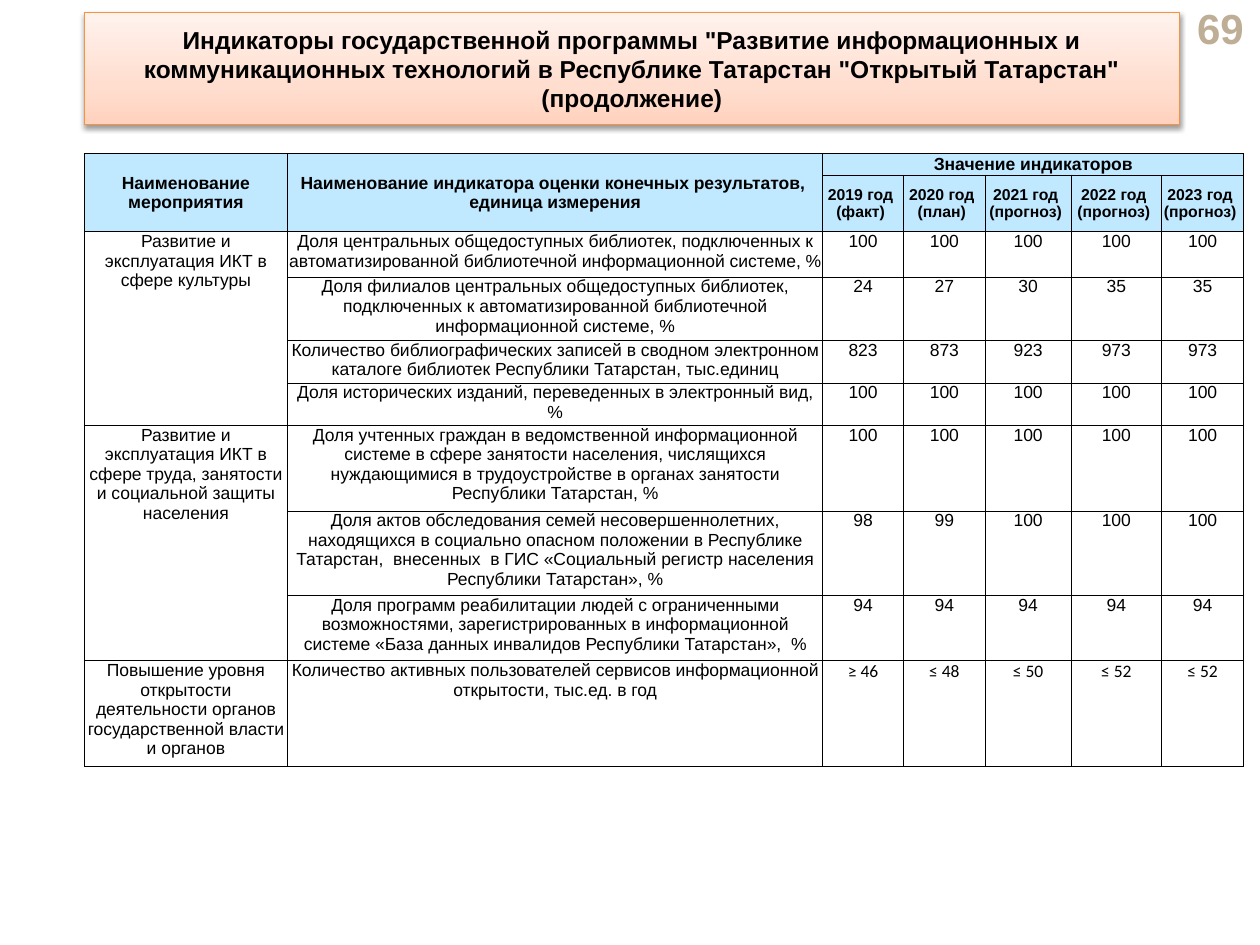
from pptx import Presentation
from pptx.dml.color import RGBColor
from pptx.enum.text import MSO_ANCHOR, MSO_AUTO_SIZE, PP_ALIGN
from pptx.oxml import parse_xml
from pptx.oxml.ns import nsdecls
from pptx.util import Inches, Pt

CENTER, RIGHT = PP_ALIGN.CENTER, PP_ALIGN.RIGHT
TOP, MIDDLE = MSO_ANCHOR.TOP, MSO_ANCHOR.MIDDLE
NO_AUTOSIZE = MSO_AUTO_SIZE.NONE

BLACK = RGBColor(0x00, 0x00, 0x00)
WHITE = RGBColor(0xFF, 0xFF, 0xFF)
HEADER_BLUE = RGBColor(0xC0, 0xE9, 0xFF)
PAGE_TAN = RGBColor(0xBF, 0xAE, 0x96)
ORANGE = RGBColor(0xF6, 0x92, 0x40)
PEACH_DARK = RGBColor(0xFF, 0xD2, 0xBD)
PEACH = RGBColor(0xFF, 0xDE, 0xD0)
PEACH_LIGHT = RGBColor(0xFF, 0xF2, 0xED)

TITLE = (
    'Индикаторы государственной программы "Развитие информационных и '
    'коммуникационных технологий в Республике Татарстан "Открытый Татарстан" (продолжение)'
)
PAGE_NUMBER = "69"
HEADERS = [
    "Наименование мероприятия",
    "Наименование индикатора оценки конечных результатов, \nединица измерения",
    "Значение индикаторов",
]
YEARS = [
    "2019 год\n(факт)",
    "2020 год\n(план)",
    "2021 год\n(прогноз)",
    "2022 год\n(прогноз)",
    "2023 год\n(прогноз)",
]
MEASURES = [
    ("Развитие и эксплуатация ИКТ в сфере культуры", "Arial", [
        ("Доля центральных общедоступных библиотек, подключенных к автоматизированной "
         "библиотечной информационной системе, %", ["100"] * 5),
        ("Доля филиалов центральных общедоступных библиотек, подключенных к "
         "автоматизированной библиотечной информационной системе, %",
         ["24", "27", "30", "35", "35"]),
        ("Количество библиографических записей в сводном электронном каталоге библиотек "
         "Республики Татарстан, тыс.единиц", ["823", "873", "923", "973", "973"]),
        ("Доля исторических изданий, переведенных в электронный вид, %", ["100"] * 5),
    ]),
    ("Развитие и эксплуатация ИКТ в сфере труда, занятости и социальной защиты населения", "Arial", [
        ("Доля учтенных граждан в ведомственной информационной системе в сфере занятости "
         "населения, числящихся нуждающимися в трудоустройстве в органах занятости "
         "Республики Татарстан, %", ["100"] * 5),
        ("Доля актов обследования семей несовершеннолетних, находящихся в социально опасном "
         "положении в Республике Татарстан,  внесенных  в ГИС «Социальный регистр населения "
         "Республики Татарстан», %", ["98", "99", "100", "100", "100"]),
        ("Доля программ реабилитации людей с ограниченными возможностями, зарегистрированных "
         "в информационной системе «База данных инвалидов Республики Татарстан»,  %", ["94"] * 5),
    ]),
    ("Повышение уровня открытости деятельности органов государственной власти и органов", "Calibri", [
        ("Количество активных пользователей сервисов информационной открытости, тыс.ед. в год",
         ["≥ 46", "≤ 48", "≤ 50", "≤ 52", "≤ 52"]),
    ]),
]
COLUMN_WIDTHS = [1.61, 4.25, 0.64, 0.65, 0.68, 0.72, 0.65]
ROW_HEIGHTS = [0.17, 0.45, 0.36, 0.5, 0.34, 0.33, 0.68, 0.67, 0.52, 0.84]


def write(frame, text, size=10, bold=False, color=BLACK, font="Arial", align=CENTER):
    para = frame.paragraphs[0]
    para.alignment = align
    for index, line in enumerate(text.split("\n")):
        if index:
            para.add_line_break()
        span = para.add_run()
        span.text = line
        span.font.name = font
        span.font.size = Pt(size)
        span.font.bold = bold
        span.font.color.rgb = color


def fill_cell(cell, text, fill=None, anchor=TOP, left=0, right=0, **text_format):
    cell.margin_left, cell.margin_right = Inches(left), Inches(right)
    cell.margin_top = cell.margin_bottom = 0
    cell.vertical_anchor = anchor
    if fill is not None:
        cell.fill.solid()
        cell.fill.fore_color.rgb = fill
    write(cell.text_frame, text, **text_format)


def add_borders(cell):
    properties = cell._tc.get_or_add_tcPr()
    for index, side in enumerate(("lnL", "lnR", "lnT", "lnB")):
        properties.insert(index, parse_xml(
            f'<a:{side} {nsdecls("a")} w="{Pt(0.5)}"><a:solidFill>'
            f'<a:srgbClr val="{BLACK}"/></a:solidFill></a:{side}>'))


def style_title(box):
    stops = "".join(
        f'<a:gs pos="{position * 1000}"><a:srgbClr val="{color}"/></a:gs>'
        for position, color in ((0, PEACH_DARK), (35, PEACH), (100, PEACH_LIGHT)))
    parts = [
        f'<a:prstGeom {nsdecls("a")} prst="roundRect"><a:avLst/></a:prstGeom>',
        f'<a:gradFill {nsdecls("a")} rotWithShape="1"><a:gsLst>{stops}</a:gsLst>'
        '<a:lin ang="16200000" scaled="1"/></a:gradFill>',
        f'<a:ln {nsdecls("a")} w="{Pt(0.75)}"><a:solidFill>'
        f'<a:srgbClr val="{ORANGE}"/></a:solidFill></a:ln>',
        f'<a:effectLst {nsdecls("a")}><a:outerShdw blurRad="{Pt(3.1)}" dist="{Pt(1.6)}" '
        f'dir="5400000" rotWithShape="0"><a:srgbClr val="{BLACK}">'
        '<a:alpha val="38000"/></a:srgbClr></a:outerShdw></a:effectLst>',
    ]
    for part in parts:
        box.element.spPr.append(parse_xml(part))


def place(box, left, top, width, height):
    box.left, box.top = Inches(left), Inches(top)
    box.width, box.height = Inches(width), Inches(height)


def add_indicator_table(page):
    frame = page.shapes.add_table(
        len(ROW_HEIGHTS), len(COLUMN_WIDTHS), Inches(0.67), Inches(1.22),
        Inches(sum(COLUMN_WIDTHS)), Inches(sum(ROW_HEIGHTS)))
    table = frame.table
    table.first_row = table.horz_banding = False
    for column, width in zip(table.columns, COLUMN_WIDTHS):
        column.width = Inches(width)
    for row, height in zip(table.rows, ROW_HEIGHTS):
        row.height = Inches(height)
    for cell in table.iter_cells():
        cell.fill.background()
        add_borders(cell)

    header = dict(fill=HEADER_BLUE, anchor=MIDDLE, right=0.04, bold=True)
    for column, text in enumerate(HEADERS):
        fill_cell(table.cell(0, column), text, left=0.04, **header)
    for column, text in enumerate(YEARS, 2):
        fill_cell(table.cell(1, column), text, size=9, **header)
    for column in (0, 1):
        table.cell(0, column).merge(table.cell(1, column))
    table.cell(0, 2).merge(table.cell(0, 6))

    row = 2
    for measure, value_font, indicators in MEASURES:
        first = table.cell(row, 0)
        fill_cell(first, measure)
        if len(indicators) > 1:
            first.merge(table.cell(row + len(indicators) - 1, 0))
        for indicator, values in indicators:
            fill_cell(table.cell(row, 1), indicator)
            for column, value in enumerate(values, 2):
                fill_cell(table.cell(row, column), value, fill=WHITE, font=value_font)
            row += 1


def main():
    deck = Presentation()
    deck.slide_width, deck.slide_height = Inches(10), Inches(7.5)
    page = deck.slides.add_slide(deck.slide_layouts[5])

    title = page.shapes.title
    place(title, 0.67, 0.1, 8.69, 0.89)
    style_title(title)
    title.text_frame.auto_size = NO_AUTOSIZE
    title.text_frame.vertical_anchor = MIDDLE
    write(title.text_frame, TITLE, size=14, bold=True)

    number = page.shapes.add_textbox(0, 0, 0, 0)
    place(number, 9.11, 0.05, 0.86, 0.34)
    number.text_frame.word_wrap = True
    number.text_frame.vertical_anchor = MIDDLE
    write(number.text_frame, PAGE_NUMBER, size=24, bold=True, color=PAGE_TAN, align=RIGHT)

    add_indicator_table(page)
    deck.save("out.pptx")


if __name__ == "__main__":
    main()
